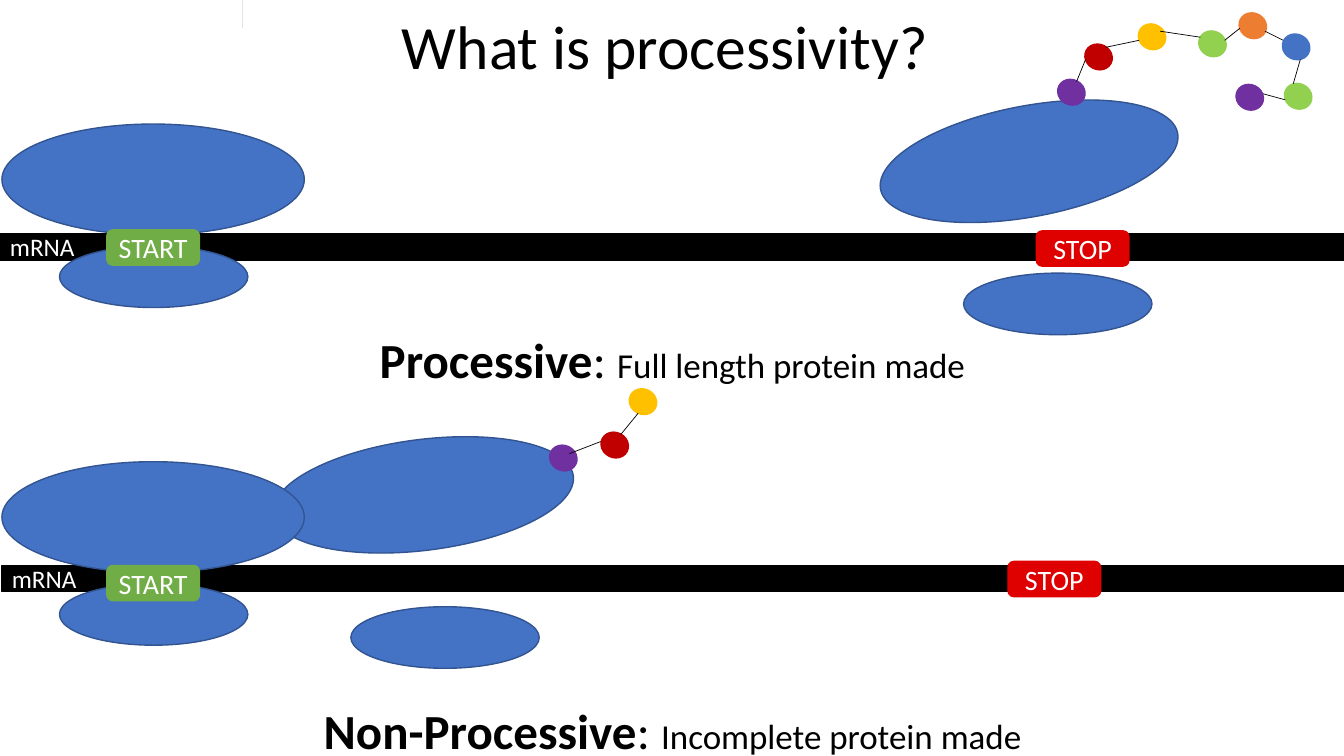
"""Build a slide contrasting processive and non-processive translation."""
from lxml import etree
from pptx import Presentation
from pptx.dml.color import RGBColor
from pptx.enum.shapes import MSO_CONNECTOR, MSO_SHAPE
from pptx.enum.text import MSO_ANCHOR, PP_ALIGN
from pptx.oxml.ns import qn
from pptx.util import Pt

OVAL, RECTANGLE, ROUNDED = MSO_SHAPE.OVAL, MSO_SHAPE.RECTANGLE, MSO_SHAPE.ROUNDED_RECTANGLE
STRAIGHT = MSO_CONNECTOR.STRAIGHT
LEFT, CENTER = PP_ALIGN.LEFT, PP_ALIGN.CENTER
TOP, MIDDLE = MSO_ANCHOR.TOP, MSO_ANCHOR.MIDDLE

COLORS = {
    "black": "000000", "white": "FFFFFF", "sliver": "222222",
    "blue": "4472C4", "outline": "325491", "purple": "7030A0",
    "crimson": "C00000", "gold": "FFC000", "lime": "92D050",
    "orange": "ED7D31", "start": "70AD47", "stop": "DF0000",
}

deck = Presentation()
deck.slide_width, deck.slide_height = Pt(960), Pt(540)
page = deck.slides.add_slide(deck.slide_layouts[6])


def add_part(kind, left, top, width, height, fill, outline=None, rotation=0):
    """Add a filled shape; without an outline colour it has no border."""
    part = page.shapes.add_shape(kind, Pt(left), Pt(top), Pt(width), Pt(height))
    part.shadow.inherit = False
    part.rotation = rotation
    part.fill.solid()
    part.fill.fore_color.rgb = RGBColor.from_string(COLORS[fill])
    if outline:
        part.line.color.rgb = RGBColor.from_string(COLORS[outline])
        part.line.width = Pt(1)
    else:
        part.line.fill.background()
    return part


def write(box, *pieces, color="black", align=CENTER, anchor=MIDDLE, spacing=1.0):
    """Fill a box with one paragraph of (text, size, bold) pieces."""
    frame = box.text_frame
    frame.word_wrap = True
    frame.vertical_anchor = anchor
    para = frame.paragraphs[0]
    para.alignment = align
    para.line_spacing = spacing
    for text, size, bold in pieces:
        span = para.add_run()
        span.text = text
        span.font.name = "Calibri"
        span.font.size = Pt(size)
        span.font.bold = bold
        span.font.color.rgb = RGBColor.from_string(COLORS[color])


title = page.shapes.add_textbox(Pt(252), Pt(-1.4), Pt(446.4), Pt(74.2))
write(title, ("What is processivity?", 44, False), spacing=0.9)
add_part(RECTANGLE, 173.5, 0, 0.1, 20, "sliver")

captions = [
    (249.1, 231.8, 462.2, "Processive", "Full length protein made"),
    (207.4, 496.8, 545.8, "Non-Processive", "Incomplete protein made"),
]
for left, top, width, term, meaning in captions:
    caption = page.shapes.add_textbox(Pt(left), Pt(top), Pt(width), Pt(43))
    write(caption, (term, 35, True), (": ", 35, False), (meaning, 25, False), anchor=TOP)

released_ribosomes = [
    (627.1, 75.6, 349.3, 688.3, 195.1),
    (194.4, 313.9, 352.8, 250.6, 433.4),
]
starting_ribosomes = [
    (1.4, 329.8, 0, 42.5, 416.9),
    (1.4, 88.6, 0, 42.5, 175.7),
]
proteins = [
    ([("purple", 755.3, 56.9), ("crimson", 774.7, 31.7), ("gold", 812.9, 17.3),
      ("lime", 856.1, 22.3), ("blue", 915.8, 24.5), ("lime", 917.3, 59.8),
      ("orange", 884.9, 9.4), ("purple", 882.7, 60.5)],
     [(769, 58.3, 775.4, 42.5), (789.8, 33.8, 813.6, 28.8),
      (828.7, 22.3, 857.5, 26.6), (874.8, 28.8, 885.6, 20.2),
      (903.6, 22.3, 916.6, 28.8), (928.8, 42.5, 923.8, 59.8),
      (902.2, 67, 918, 71.3)]),
    ([("purple", 392.4, 318.2), ("crimson", 429.1, 308.9), ("gold", 449.3, 277.9)],
     [(406.8, 324, 429.1, 315.4), (443.5, 310.3, 455.8, 295.2)]),
]
strands = [(0, 167), (1.4, 403.9)]

for stage in (released_ribosomes, starting_ribosomes):
    if stage is starting_ribosomes:
        for beads, bonds in proteins:
            for color, left, top in beads:
                add_part(OVAL, left, top, 20, 18, color, color, 27.2)
            for x1, y1, x2, y2 in bonds:
                bond = page.shapes.add_connector(STRAIGHT, Pt(x1), Pt(y1), Pt(x2), Pt(y2))
                bond.line.color.rgb = RGBColor.from_string(COLORS["black"])
                bond.line.width = Pt(0.5)
                etree.SubElement(bond._element.spPr, qn("a:effectLst"))
        for left, top in strands:
            strand = add_part(RECTANGLE, left, top, 960 - left, 18.7, "black", "black")
            write(strand, ("mRNA", 18, False), color="white", align=LEFT)
    for left, top, tilt, small_left, small_top in stage:
        add_part(OVAL, left, top, 216, 79.2, "blue", "outline", tilt)
        add_part(OVAL, small_left, small_top, 134.6, 44, "blue", "outline")

codons = [
    ("START", 76.3, 403.9), ("START", 76.3, 164.2),
    ("STOP", 740.2, 164.9), ("STOP", 720, 401),
]
for name, left, top in codons:
    codon = add_part(ROUNDED, left, top, 66.2, 25.2, name.lower(), name.lower())
    write(codon, (name, 20, False), color="white")

deck.save("out.pptx")
